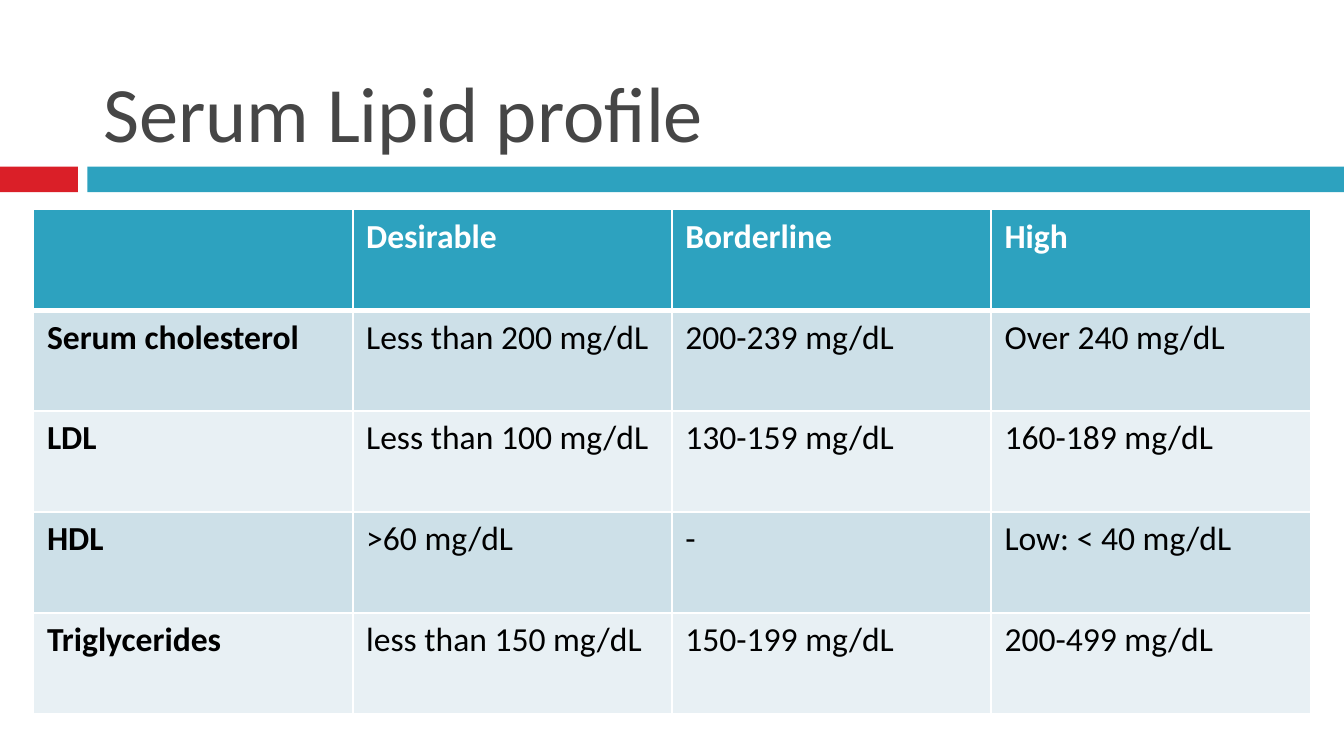
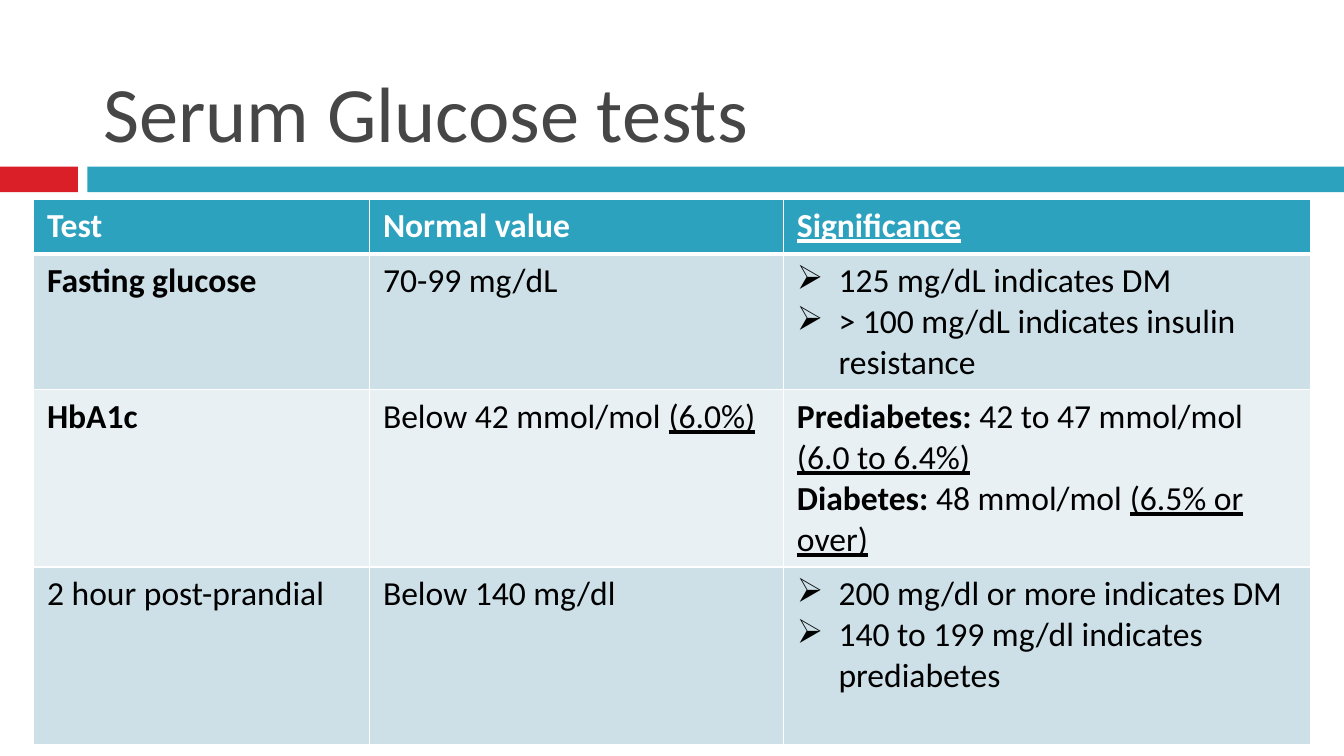
from lxml import etree
from pptx import Presentation
from pptx.dml.color import RGBColor
from pptx.enum import shapes, text
from pptx.oxml import ns
from pptx.util import Inches, Pt

FONT = "Calibri"
HUES = {"red": "DA1F28", "teal": "2DA2BF", "title": "464646",
        "white": "FFFFFF", "black": "000000", "dark": "CDE0E8", "light": "E8F0F4"}
BULLET = "➢"

# Cell text: a line is a paragraph, "|" parts runs, "*" starts bold, "_" underlined.
LIPIDS = [
    ["", "*Desirable", "*Borderline", "*High"],
    ["*Serum cholesterol", "Less than 200 mg/dL", "200-239 mg/dL", "Over 240 mg/dL"],
    ["*LDL", "Less than 100 mg/dL", "130-159 mg/dL", "160-189 mg/dL"],
    ["*HDL", ">60 mg/dL", "-", "Low: < 40 mg/dL"],
    ["*Triglycerides", "less than 150 mg/dL", "150-199 mg/dL", "200-499 mg/dL"],
]
GLUCOSE = [
    ["*Test", "*Normal value", "*_Significance"],
    ["*Fasting glucose", "70-99 mg/dL",
     "➢125 mg/dL indicates DM\n➢> 100 mg/dL indicates insulin resistance"],
    ["*HbA1c", "Below 42 mmol/mol |_(6.0%)",
     "*Prediabetes:| 42 to 47 mmol/mol |_(6.0 to 6.4%)\n"
     "*Diabetes:| 48 mmol/mol |_(6.5% or over)"],
    ["2 hour post-prandial", "Below 140 mg/dl",
     "➢200 mg/dl or more indicates DM\n➢140 to 199 mg/dl indicates prediabetes"],
]


def color(name):
    return RGBColor.from_string(HUES[name])


def style(para, size, hue):
    para.font.name = FONT
    para.font.size = Pt(size)
    para.font.color.rgb = color(hue)


def add_sub(parent, tag, **attrs):
    return etree.SubElement(parent, ns.qn(tag), **attrs)


def add_bar(slide, left, top, width, height, hue):
    bar = slide.shapes.add_shape(shapes.MSO_SHAPE.RECTANGLE, Inches(left),
                                 Inches(top), Inches(width), Inches(height))
    bar.shadow.inherit = False
    bar.fill.solid()
    bar.fill.fore_color.rgb = color(hue)
    bar.line.fill.background()


def add_band(slide, top=1.24, height=0.19, split=0.58, gap=0.07):
    start = split + gap
    add_bar(slide, 0, top, split, height, "red")
    add_bar(slide, start, top, 10 - start, height, "teal")


def add_title(slide, words):
    box = slide.shapes.add_textbox(Inches(0.67), Inches(0.13), Inches(8.92), Inches(1.1))
    frame = box.text_frame
    frame.word_wrap = True
    frame.vertical_anchor = text.MSO_ANCHOR.BOTTOM
    para = frame.paragraphs[0]
    para.text = words
    style(para, 42, "title")


def add_bullet(para):
    props = para._p.get_or_add_pPr()
    props.set("marL", str(Inches(0.31)))
    props.set("indent", str(Inches(-0.31)))
    add_sub(props, "a:buChar", char=BULLET)


def write_cell(cell, words, hue):
    frame = cell.text_frame
    for i, line in enumerate(words.split("\n")):
        para = frame.add_paragraph() if i else frame.paragraphs[0]
        if line.startswith(BULLET):
            add_bullet(para)
            line = line[len(BULLET):]
        style(para, 18, hue)
        for part in line.split("|"):
            if not part:
                continue
            plain = part.lstrip("*_")
            marks = part[:len(part) - len(plain)]
            run = para.add_run()
            run.text = plain
            run.font.bold = "*" in marks
            run.font.underline = "_" in marks


def edge_cell(cell, row):
    """Draw white borders, with a thick rule under the header row."""
    props = cell._tc.get_or_add_tcPr()
    widths = {"L": 1, "R": 1, "T": 3 if row == 1 else 1, "B": 3 if row == 0 else 1}
    for side, width in widths.items():
        line = add_sub(props, "a:ln" + side, w=str(Pt(width)))
        add_sub(add_sub(line, "a:solidFill"), "a:srgbClr", val=HUES["white"])


def add_grid(slide, top, cols, rows, cells):
    frame = slide.shapes.add_table(len(rows), len(cols), Inches(0.25), Inches(top),
                                   Inches(sum(cols)), Inches(sum(rows)))
    table = frame.table
    table.horz_banding = False
    for col, width in zip(table.columns, cols):
        col.width = Inches(width)
    for r, height in enumerate(rows):
        table.rows[r].height = Inches(height)
        fill = ("dark" if r % 2 else "light") if r else "teal"
        for c, words in enumerate(cells[r]):
            cell = table.cell(r, c)
            write_cell(cell, words, "black" if r else "white")
            edge_cell(cell, r)
            cell.fill.solid()
            cell.fill.fore_color.rgb = color(fill)


def add_page(deck, title, top, cols, rows, cells):
    slide = deck.slides.add_slide(deck.slide_layouts[6])
    add_band(slide)
    add_title(slide, title)
    add_grid(slide, top, cols, rows, cells)


def main():
    deck = Presentation()
    deck.slide_width, deck.slide_height = Inches(10), Inches(5.625)
    add_page(deck, "Serum Lipid profile", 1.56, [9.5 / 4] * 4, [0.75] * 5, LIPIDS)
    add_page(deck, "Serum Glucose tests", 1.48, [2.5, 3.08, 3.92],
             [0.41, 1.01, 1.32, 1.32], GLUCOSE)
    deck.save("out.pptx")


if __name__ == "__main__":
    main()
